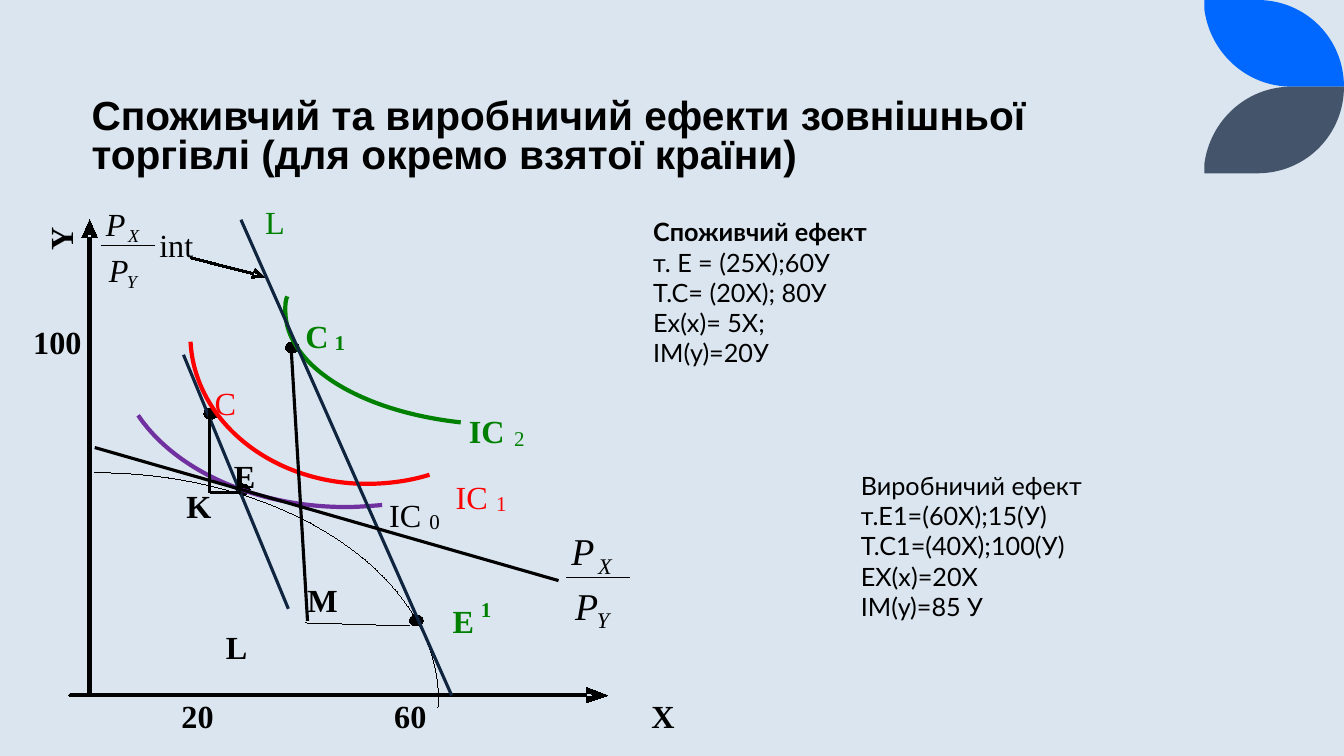
import pptx
import pptx.util
import pptx.dml.color
import pptx.enum.shapes
import pptx.enum.text
import pptx.oxml.ns
import lxml.etree

Pt = pptx.util.Pt
qn = pptx.oxml.ns.qn
node = lxml.etree.SubElement
deck = pptx.Presentation()
deck.slide_width = pptx.util.Inches(13.33)
deck.slide_height = pptx.util.Inches(7.5)
# Grid of 75 rows with square cells; all positions are in cells
cell = deck.slide_height // 75
slide = deck.slides.add_slide(deck.slide_layouts[6])
shapes = slide.shapes

hexes = {"back": "DAE5EF", "blue": "0068FF", "slate": "44546A", "black": "000000",
         "green": "008000", "red": "FF0000", "violet": "7030A0", "navy": "0F243E"}
tint = {k: pptx.dml.color.RGBColor.from_string(v) for k, v in hexes.items()}
slide.background.fill.solid()
slide.background.fill.fore_color.rgb = tint["back"]


def write(text, left, top, wide, high, size, ink="black", style="", font="Times New Roman", pad=0):
    box = shapes.add_textbox(*(round(v * cell) for v in (left, top, wide, high)))
    frame = box.text_frame
    frame.text = text
    frame.word_wrap = True
    frame.margin_left = frame.margin_right = round(pad * cell)
    frame.margin_top = frame.margin_bottom = round(pad * cell / 2)
    for para in frame.paragraphs:
        for run in para.runs:
            run.font.size = Pt(size)
            run.font.name = font
            run.font.bold = "b" in style
            run.font.italic = "i" in style
            run.font.color.rgb = tint[ink]
    return box


def trace(loops, ink, width=None, solid=True):
    """Draw loops of steps: one point is a line, three points are a cubic arc."""
    dots = [[round(v * cell) for v in p] for loop in loops for step in loop for p in step]
    form = shapes.build_freeform(*dots[0])
    form.add_line_segments(dots[1:], close=False)
    form = form.convert_to_shape()
    form.shadow.inherit = False
    route = form._element.find(".//" + qn("a:path"))
    for old in list(route):
        route.remove(old)
    for loop in loops:
        for n, step in enumerate(loop):
            kind = "moveTo" if n == 0 else "lnTo" if len(step) == 1 else "cubicBezTo"
            move = node(route, qn("a:" + kind))
            for x, y in step:
                node(move, qn("a:pt"), x=str(round(x * cell) - form.left),
                     y=str(round(y * cell) - form.top))
        if solid:
            node(route, qn("a:close"))
    if solid:
        form.fill.solid()
        form.fill.fore_color.rgb = tint[ink]
    else:
        form.fill.background()
    if width is None:
        form.line.fill.background()
    else:
        form.line.color.rgb = tint[ink]
        form.line._get_or_add_ln().set("w", str(Pt(width)))


# Corner leaves, mirrored about the row where they meet
mid = 8.6
for ink, turn in (("blue", 1), ("slate", -1)):
    leaf = [[(119.45, -8.6)], [(124.7, -8.6)], [(129.5, -8.6), (133.3, -4.8), (133.3, 0)],
            [(128.1, 0)], [(123.6, 0), (120, -3.4), (119.45, -7.7)]]
    trace([[[(x, mid + turn * y) for x, y in step] for step in leaf]], ink)

# Title
title = write("Споживчий та виробничий ефекти зовнішньої торгівлі (для окремо взятої країни)",
              8.1, 0.9, 111.4, 17.2, 29, style="b", font="Arial", pad=1)
title.text_frame.vertical_anchor = pptx.enum.text.MSO_ANCHOR.BOTTOM
title.text_frame.paragraphs[0].line_spacing = 0.8

# Axes and the pointer to the price line, each a bar with a head
trace([[[(8.7, 69)], [(8.7, 23.3)], [(9.1, 23.3)], [(9.1, 69)]],
       [[(8.1, 23.6)], [(8.9, 21.8)], [(9.7, 23.6)]]], "black", 0)
trace([[[(7, 68.8)], [(58.6, 68.8)], [(58.7, 68.8), (58.8, 68.9), (58.8, 69)],
        [(58.8, 69), (58.7, 69.1), (58.6, 69.1)], [(7, 69.1)],
        [(6.9, 69.1), (6.8, 69), (6.8, 69)], [(6.8, 68.9), (6.9, 68.8), (7, 68.8)]],
       [[(58.2, 68.2)], [(60.3, 69)], [(58.2, 69.7)]]], "black", 0)
trace([[[(19.1, 25.5)], [(25.4, 27.1)], [(25.5, 27.1), (25.6, 27.2), (25.5, 27.3)],
        [(25.5, 27.3), (25.4, 27.4), (25.3, 27.3)], [(19, 25.7)],
        [(18.9, 25.7), (18.9, 25.6), (18.9, 25.5)], [(19, 25.5), (19.1, 25.4), (19.1, 25.5)]],
       [[(25.3, 26.6)], [(26.3, 27.5)], [(24.9, 27.6)]]], "black", 0)

# Points E, E1, C, C1
for x, y in ((23.4, 48), (40.6, 61), (20.2, 40.5), (28.3, 33.9)):
    dot = shapes.add_shape(pptx.enum.shapes.MSO_SHAPE.OVAL,
                           *(round(v * cell) for v in (x, y, 1.4, 1.1)))
    dot.shadow.inherit = False
    dot.fill.solid()
    dot.fill.fore_color.rgb = tint["black"]
    dot.line.color.rgb = tint["black"]
    dot.line._get_or_add_ln().set("w", "0")

# Production frontier and indifference curves
for ink, width, curve in (
        ("black", 0, [[(9.4, 46.9)], [(28.2, 46.9), (43.5, 57), (43.5, 69.5)],
                      [(43.5, 69.8), (43.5, 70), (43.4, 70.2)]]),
        ("violet", 3, [[(37.9, 50.1)], [(36.7, 50.2), (35.5, 50.3), (34.3, 50.3)],
                       [(25.4, 50.3), (17.4, 46.7), (13.7, 41.2)]]),
        ("green", 3, [[(45.7, 41.9)], [(35.6, 40.8), (28.3, 36.2), (28.3, 30.8)],
                      [(28.3, 30.3), (28.3, 29.8), (28.5, 29.4)]]),
        ("red", 3, [[(42.6, 47.1)], [(40.7, 47.7), (38.5, 48), (36.4, 48)],
                    [(27, 48), (19.3, 41.8), (18.9, 33.9)]])):
    trace([curve], ink, width, solid=False)

# Price lines, trade triangles and fraction bars
for x1, y1, x2, y2, ink, width in (
        (44.8, 69, 23.9, 21.8, "navy", 2.25), (28.6, 60.4, 18.2, 35.2, "navy", 2.25),
        (9.4, 44.4, 55.4, 57.6, "black", 2.25), (28.9, 34.9, 30.5, 61.6, "black", 2.25),
        (30.3, 61.8, 40.6, 62.1, "black", 0), (20.8, 40.7, 20.8, 48.9, "black", 2.25),
        (20.8, 48.9, 23.9, 48.9, "black", 2.25),
        (10.1, 24.4, 15.3, 24.4, "black", 0), (56.2, 57.3, 62.4, 57.3, "black", 0)):
    line = shapes.add_connector(pptx.enum.shapes.MSO_CONNECTOR.STRAIGHT,
                                *(round(v * cell) for v in (x1, y1, x2, y2)))
    line.line.color.rgb = tint[ink]
    line.line._get_or_add_ln().set("w", str(Pt(width)))
    node(line._element.spPr, qn("a:effectLst"))

# Labels: text, left, top, width, size, colour, style
for text, x, y, wide, size, ink, style in (
        ("100", 3.3, 31.95, 7, 23, "black", "b"), ("X", 64.6, 69.1, 4.8, 23, "black", "b"),
        ("20", 18, 69.1, 4.1, 23, "black", "b"), ("60", 39.1, 69.1, 6.3, 23, "black", "b"),
        ("E", 23.2, 45.25, 4.5, 23, "black", "b"), ("K", 18.5, 48.25, 5, 23, "black", "b"),
        ("M", 30.5, 57.6, 5.6, 23, "black", "b"), ("L", 22.4, 62.2, 4.5, 23, "black", "b"),
        ("E", 44.9, 59.65, 4.5, 23, "green", "b"), ("1", 47.7, 59.2, 2.6, 15, "green", "b"),
        ("С", 21.3, 38, 4.4, 23, "red", ""), ("int", 15.8, 22.4, 6, 23, "black", ""),
        ("IC", 38.6, 49.1, 5.8, 23, "black", ""), ("0", 42.6, 50.4, 2.6, 15, "black", ""),
        ("IC", 45.2, 47.4, 5.8, 23, "red", ""), ("1", 49.2, 48.7, 2.6, 15, "red", ""),
        ("IC", 46.5, 40.8, 6.3, 23, "green", "b"), ("2", 51, 42.2, 2.6, 15, "green", ""),
        ("С", 30.3, 31.4, 4.8, 23, "green", "b"), ("1", 33.2, 32.7, 2.6, 15, "green", "b"),
        ("L", 26.3, 20.1, 4.2, 23, "green", "")):
    write(text, x, y, wide, 4.3 if size == 23 else 3.1, size, ink, style)
write("Y", 3.9, 20.8, 4.2, 3.9, 23, style="b").rotation = 270

# Price ratios, placed around their fraction bars
for x, y, zoom, big, small in ((10.1, 24.4, 1, 23, 13), (56.2, 57.3, 1.2, 27, 16)):
    for text, dx, dy, wide, size in (("P", 0.4, -4.1, 4.1, big), ("X", 2.6, -2.1, 2.5, small),
                                     ("P", 0.7, 0.4, 4.1, big), ("Y", 2.5, 2.4, 2.4, small)):
        write(text, x + dx * zoom, y + dy * zoom, wide * zoom, size * 0.19, size, style="i")

# Effects of trade
use = write("Споживчий ефект\nт. Е = (25Х);60У\nТ.С= (20Х); 80У\nЕх(х)= 5Х;\nІМ(у)=20У",
            63.8, 21, 25.9, 16.2, 18, font="Lato", pad=1)
use.text_frame.paragraphs[0].runs[0].font.bold = True
write("Виробничий ефект\nт.Е1=(60Х);15(У)\nТ.С1=(40Х);100(У)\nЕХ(х)=20Х\nІМ(у)=85 У",
      84.4, 46.15, 25.3, 16.2, 18, font="Lato", pad=1)

deck.save("out.pptx")
